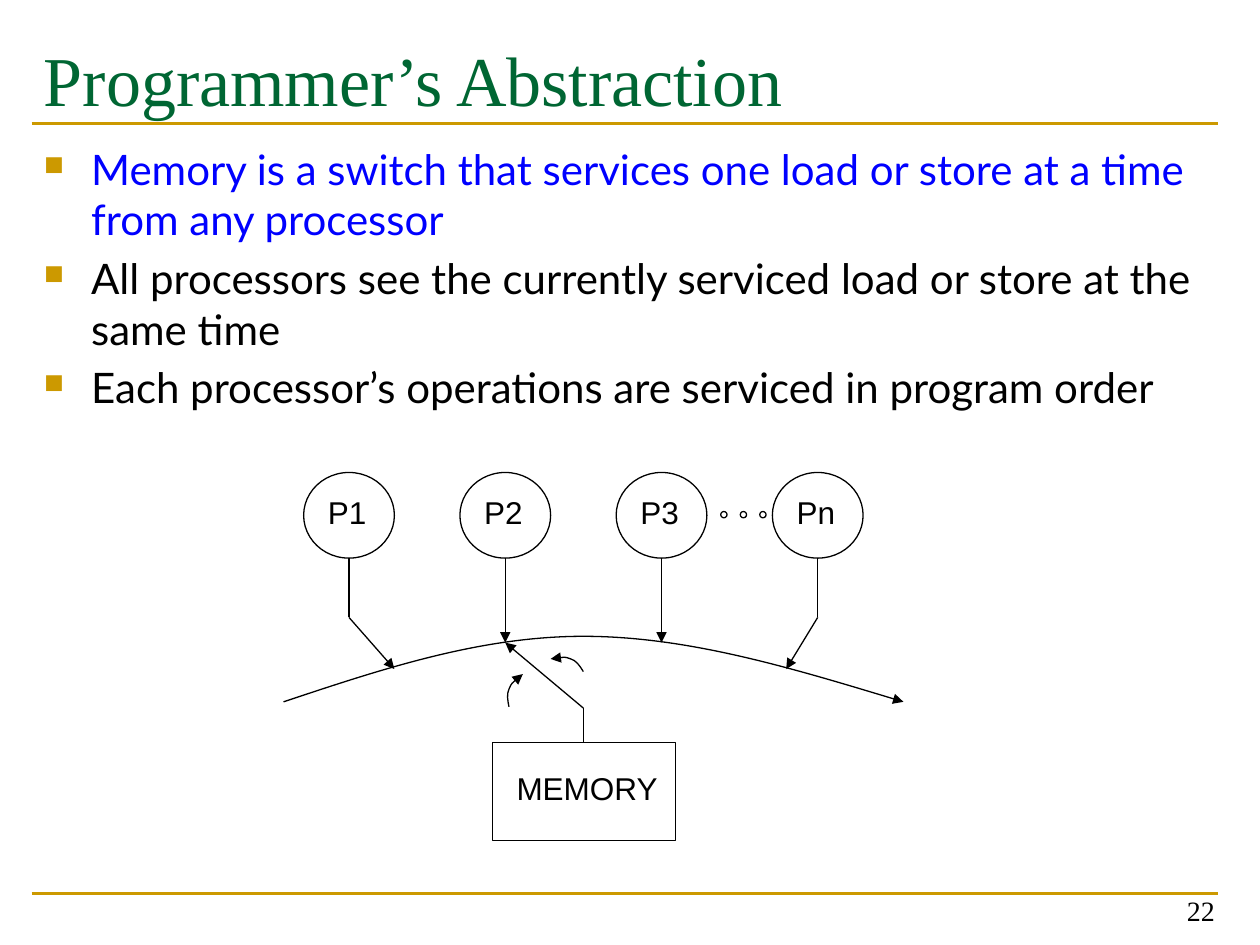
from lxml import etree
from pptx import Presentation
from pptx import util as u
from pptx.dml.color import RGBColor
from pptx.enum import shapes, text
from pptx.oxml.ns import qn

COLORS = {"gold": "CC9900", "green": "006633", "blue": "0000FF", "black": "000000"}
COLUMNS, ROWS = 100, 75
WIDTH, HEIGHT = u.Inches(10), u.Inches(7.5)
PROCESSORS = ["P1", "P2", "P3", "Pn"]
FIRST_CENTER, PITCH = 27.7, 12.4
BULLETS = [
    ("Memory is a switch that services one load or store at a time from any processor", "blue"),
    ("All processors see the currently serviced load or store at the same time", "black"),
    ("Each processor’s operations are serviced in program order", "black"),
]
CURVES = [
    [(22.5, 55.7), (30.3, 53.1), (38.1, 50.5), (46.3, 50.5),
     (54.5, 50.5), (63.1, 53.1), (71.7, 55.7)],
    [(46.3, 53.3), (46, 52.8), (45.7, 52.4), (45.3, 52.3),
     (44.8, 52.1), (44.3, 52.2), (43.7, 52.3)],
    [(40.4, 56.1), (40.3, 55.6), (40.2, 55.1), (40.4, 54.7),
     (40.6, 54.2), (41, 53.9), (41.5, 53.5)],
]


def col(count):
    return round(WIDTH * count / COLUMNS)


def row(count):
    return round(HEIGHT * count / ROWS)


def rgb(name):
    return RGBColor.from_string(COLORS[name])


def style_line(shape, color="black", width=0.75, arrow=False):
    shape.line.color.rgb = rgb(color)
    shape.line.width = u.Pt(width)
    if arrow:
        etree.SubElement(shape.line._get_or_add_ln(), qn("a:tailEnd"), type="triangle")


def add_line(page, start, end, arrow=False, color="black", width=0.75):
    line = page.shapes.add_connector(
        shapes.MSO_CONNECTOR.STRAIGHT,
        col(start[0]), row(start[1]), col(end[0]), row(end[1]))
    style_line(line, color, width, arrow)
    etree.SubElement(line._element.spPr, qn("a:effectLst"))


def add_outline(page, kind, left, top, width, height):
    shape = page.shapes.add_shape(kind, col(left), row(top), col(width), row(height))
    shape.shadow.inherit = False
    shape.fill.background()
    style_line(shape)


def add_curve(page, points):
    places = [(col(x), row(y)) for x, y in points]
    builder = page.shapes.build_freeform(*places[0])
    builder.add_line_segments(places[1:], close=False)
    curve = builder.convert_to_shape()
    curve.shadow.inherit = False
    curve.fill.background()
    style_line(curve, arrow=True)
    segments = list(curve._element.iter(qn("a:lnTo")))
    outline = segments[0].getparent()
    for first in range(0, len(segments), 3):
        bezier = etree.SubElement(outline, qn("a:cubicBezTo"))
        for segment in segments[first:first + 3]:
            bezier.append(segment[0])
            outline.remove(segment)


def style_para(para, words, size, font, color, align):
    para.text = words
    para.alignment = align
    para.font.size = u.Pt(size)
    para.font.name = font
    para.font.color.rgb = rgb(color)


def add_box(page, left, top, width, height, anchor, wrap=True):
    box = page.shapes.add_textbox(col(left), row(top), col(width), row(height))
    frame = box.text_frame
    frame.word_wrap = wrap
    frame.vertical_anchor = anchor
    return frame


def add_label(page, words, left, top, width):
    frame = add_box(page, left, top, width, 5, text.MSO_ANCHOR.MIDDLE, wrap=False)
    style_para(frame.paragraphs[0], words, 18, "Arial", "black", text.PP_ALIGN.CENTER)


def add_bullet(para, words, color):
    style_para(para, words, 24, "Lato", color, text.PP_ALIGN.LEFT)
    para.space_before = u.Pt(4.8)
    props = para._p.get_or_add_pPr()
    props.set("marL", str(col(3.75)))
    props.set("indent", str(-col(3.75)))
    marks = [etree.Element(qn("a:buClr")),
             etree.Element(qn("a:buSzPct"), val="65000"),
             etree.Element(qn("a:buChar"), char="■")]
    etree.SubElement(marks[0], qn("a:srgbClr"), val=COLORS["gold"])
    default_font = props.find(qn("a:defRPr"))
    for mark in marks:
        default_font.addprevious(mark)


def add_frame_text(page):
    for y in (70.9, 9.8):
        add_line(page, (2.5, y), (96.7, y), color="gold", width=1.5)
    title = add_box(page, 2.5, 1.7, 94.2, 11.7, text.MSO_ANCHOR.TOP)
    title.margin_top = row(1.2)
    style_para(title.paragraphs[0], "Programmer’s Abstraction", 40,
               "Times New Roman", "green", text.PP_ALIGN.LEFT)
    body = add_box(page, 2.5, 10.9, 94.2, 56.8, text.MSO_ANCHOR.TOP)
    for index, (words, color) in enumerate(BULLETS):
        para = body.add_paragraph() if index else body.paragraphs[0]
        add_bullet(para, words, color)
    number = add_box(page, 74.1, 69.1, 23.3, 5, text.MSO_ANCHOR.BOTTOM)
    style_para(number.paragraphs[0], "22", 16, "Times New Roman", "black",
               text.PP_ALIGN.RIGHT)


def add_processors(page):
    centers = [FIRST_CENTER + PITCH * index for index in range(len(PROCESSORS))]
    for name, center in zip(PROCESSORS, centers):
        add_outline(page, shapes.MSO_SHAPE.FLOWCHART_CONNECTOR,
                    center - 3.6, 37.5, 7.2, 6.8)
        add_label(page, name, center - 3.2, 38.1, 6.1)
    for center in centers[1:3]:
        add_line(page, (center, 44.3), (center, 51), arrow=True)
    for center, target in ((centers[0], 31.3), (centers[3], 62.4)):
        add_line(page, (center, 44.3), (center, 49))
        add_line(page, (center, 49), (target, 53.1), arrow=True)
    for index in range(3):
        add_outline(page, shapes.MSO_SHAPE.OVAL, 57.2 + 1.55 * index, 40.6, 0.5, 0.5)


def add_memory(page):
    add_outline(page, shapes.MSO_SHAPE.RECTANGLE, 39.1, 58.9, 14.5, 7.8)
    add_label(page, "MEMORY", 38.1, 60, 17)
    add_line(page, (46.3, 56.2), (46.3, 58.9))
    add_line(page, (46.3, 56.2), (40.1, 51), arrow=True)


def main():
    deck = Presentation()
    deck.slide_width, deck.slide_height = WIDTH, HEIGHT
    page = deck.slides.add_slide(deck.slide_layouts[6])
    add_frame_text(page)
    add_processors(page)
    add_memory(page)
    for points in CURVES:
        add_curve(page, points)
    deck.save("out.pptx")


if __name__ == "__main__":
    main()
